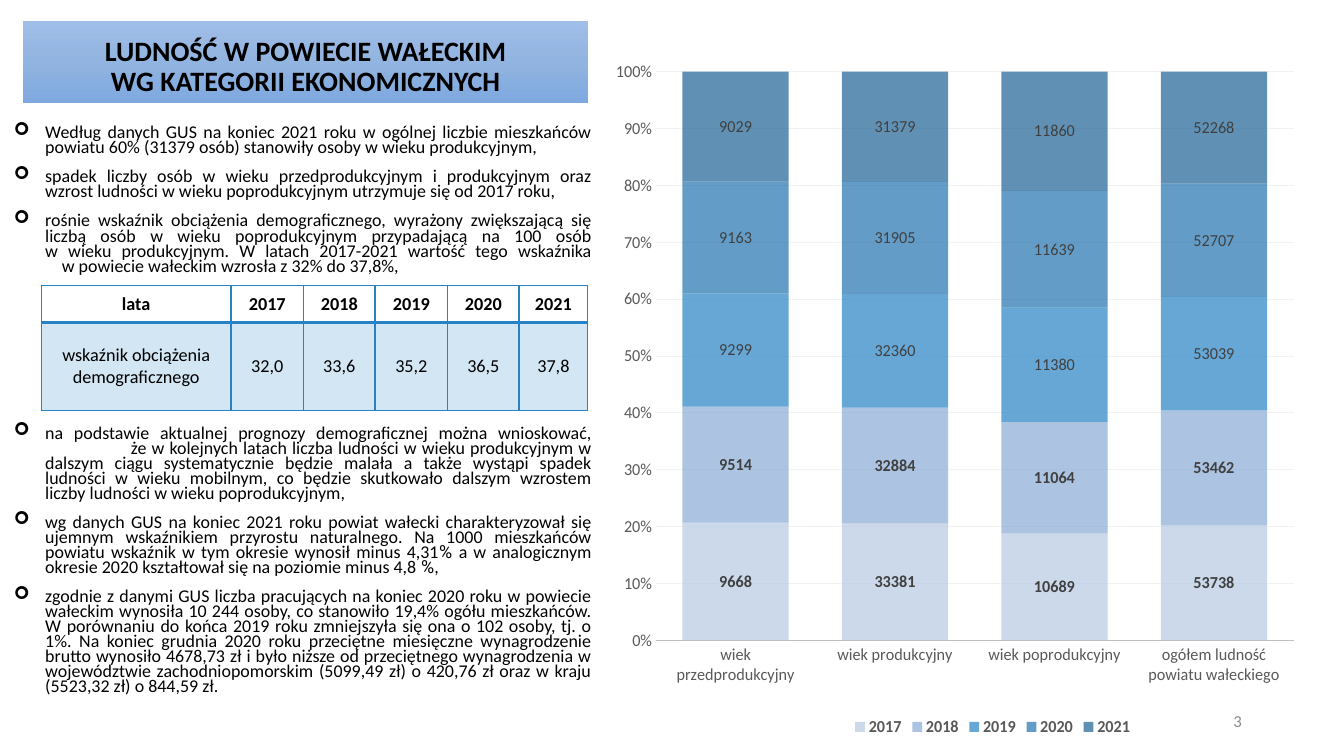
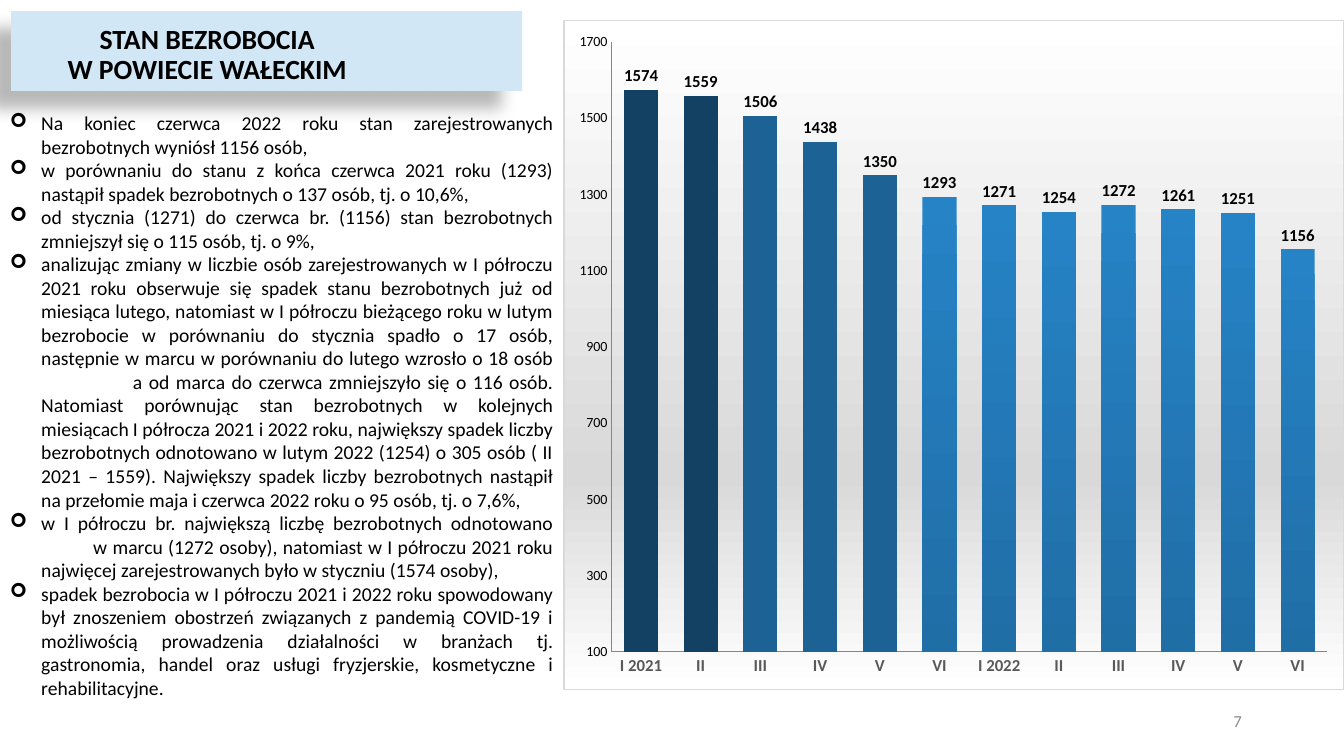
import copy

from pptx import Presentation
from pptx import util as u
from pptx.chart.data import CategoryChartData
from pptx.dml.color import RGBColor
from pptx.enum import chart as charts, text as texts
from pptx.oxml import parse_xml
from pptx.oxml.ns import nsdecls, qn

BLACK = RGBColor(0x00, 0x00, 0x00)
DARK = RGBColor(0x40, 0x40, 0x40)
GREY = RGBColor(0x59, 0x59, 0x59)
PAGE_GREY = RGBColor(0x8C, 0x8C, 0x8C)
AXIS = RGBColor(0xBF, 0xBF, 0xBF)
AXIS_DARK = RGBColor(0x86, 0x86, 0x86)
GRID = RGBColor(0xF2, 0xF2, 0xF2)
FRAME = RGBColor(0xD9, 0xD9, 0xD9)
WHITE = RGBColor(0xFF, 0xFF, 0xFF)
PALE = RGBColor(0xD1, 0xE7, 0xF6)
BLUE = RGBColor(0x26, 0x83, 0xC6)
BLUE_LOW = RGBColor(0x20, 0x6E, 0xA6)
NAVY = RGBColor(0x13, 0x41, 0x63)
DEEP = RGBColor(0x1D, 0x62, 0x94)
YEAR_COLORS = [RGBColor(0xB7, 0xC9, 0xE3), RGBColor(0x89, 0xAB, 0xD5), BLUE,
               RGBColor(0x22, 0x74, 0xB0), RGBColor(0x1D, 0x63, 0x96)]
TITLE_STOPS = [(0, RGBColor(0x9F, 0xBE, 0xE8)), (50, RGBColor(0x92, 0xB4, 0xE0)),
               (100, RGBColor(0x7E, 0xA9, 0xE0))]
INDENT = u.Cm(0.79)


def dress(font, size=12, color=BLACK, bold=False, name="Calibri"):
    font.size, font.bold, font.name = u.Pt(size), bold, name
    font.color.rgb = color


def write(para, text, **style):
    """Add text to a paragraph; a newline becomes a line break."""
    for number, line in enumerate(text.split("\n")):
        if number:
            para.add_line_break()
        span = para.add_run()
        span.text = line
        dress(span.font, **style)
        if number:
            span._r.getprevious().insert(0, copy.deepcopy(span._r.rPr))


def gradient(stops):
    marks = "".join(f'<a:gs pos="{place * 1000}"><a:srgbClr val="{color}"/></a:gs>'
                    for place, color in stops)
    return parse_xml(f'<a:gradFill {nsdecls("a")} rotWithShape="1"><a:gsLst>{marks}</a:gsLst>'
                     '<a:lin ang="5400000" scaled="0"/></a:gradFill>')


def solid(fill, color):
    fill.solid()
    fill.fore_color.rgb = color


def fade(element, percent):
    """Make the solid fill of an element partly transparent."""
    color = element.find(f'{qn("a:solidFill")}/{qn("a:srgbClr")}')
    color.append(parse_xml(f'<a:alpha {nsdecls("a")} val="{percent * 1000}"/>'))


class Report:
    def __init__(self):
        self.deck = Presentation()
        self.deck.slide_width, self.deck.slide_height = u.Cm(33.87), u.Cm(19.05)
        self.page = None

    def new_page(self, number):
        self.page = self.deck.slides.add_slide(self.deck.slide_layouts[5])
        frame = self.text_frame(23.93, 17.65, 7.62, 1.02)
        frame.vertical_anchor = texts.MSO_ANCHOR.MIDDLE
        para = frame.paragraphs[0]
        para.alignment = texts.PP_ALIGN.RIGHT
        write(para, str(number), color=PAGE_GREY)

    def text_frame(self, *place):
        box = self.page.shapes.add_textbox(*map(u.Cm, place))
        box.text_frame.word_wrap = True
        return box.text_frame

    def title(self, lines, place, size, first_shift=0):
        """Fill the title; first_shift is a right margin for its first line."""
        box = self.page.shapes.title
        box.left, box.top, box.width, box.height = map(u.Cm, place)
        frame = box.text_frame
        frame.word_wrap = True
        frame.auto_size = texts.MSO_AUTO_SIZE.NONE
        frame.vertical_anchor = texts.MSO_ANCHOR.BOTTOM
        for number, line in enumerate(lines):
            para = frame.add_paragraph() if number else frame.paragraphs[0]
            para.alignment, para.line_spacing = texts.PP_ALIGN.CENTER, 0.9
            write(para, line, size=size, bold=True)
        if first_shift:
            frame.paragraphs[0]._p.get_or_add_pPr().set("marR", str(u.Cm(first_shift)))
        return box

    def bullets(self, place, items, size, spacing=1.0, before=0):
        """Items are (text, tab stops); a tuple of texts alternates Calibri and Roboto."""
        frame = self.text_frame(*place)
        for number, (parts, tabs) in enumerate(items):
            para = frame.add_paragraph() if number else frame.paragraphs[0]
            para.alignment, para.line_spacing = texts.PP_ALIGN.JUSTIFY, spacing
            para.space_before = u.Pt(before)
            props = para._p.get_or_add_pPr()
            props.set("marL", str(INDENT))
            props.set("indent", str(-INDENT))
            props.append(parse_xml(f'<a:buFont {nsdecls("a")} typeface="Wingdings"/>'))
            props.append(parse_xml(f'<a:buChar {nsdecls("a")} char="➢"/>'))
            if tabs:
                stops = "".join(f'<a:tab pos="{u.Cm(tab)}" algn="l"/>' for tab in tabs)
                props.append(parse_xml(f'<a:tabLst {nsdecls("a")}>{stops}</a:tabLst>'))
            for index, part in enumerate([parts] if isinstance(parts, str) else parts):
                write(para, part, size=size, name=("Calibri", "Roboto")[index % 2])

    def table(self, place, widths, heights, rows):
        table = self.page.shapes.add_table(len(rows), len(widths), *map(u.Cm, place)).table
        table.first_row = table.horz_banding = False
        for column, width in zip(table.columns, widths):
            column.width = u.Cm(width)
        for r, (row, height) in enumerate(zip(rows, heights)):
            table.rows[r].height = u.Cm(height)
            for c, value in enumerate(row):
                cell = table.cell(r, c)
                cell.vertical_anchor = texts.MSO_ANCHOR.MIDDLE
                para = cell.text_frame.paragraphs[0]
                para.alignment = texts.PP_ALIGN.CENTER
                write(para, value, size=13, bold=r == 0)
                props = cell._tc.get_or_add_tcPr()
                if r:
                    solid(cell.fill, BLUE)
                    fade(props, 20)
                else:
                    cell.fill.background()
                # The rule under the header row is double width
                thick = "T" if r else "B"
                for index, side in enumerate("LRTB"):
                    props.insert(index, parse_xml(
                        f'<a:ln{side} {nsdecls("a")} w="{u.Pt(2 if side == thick else 1)}">'
                        f'<a:solidFill><a:srgbClr val="{BLUE}"/></a:solidFill></a:ln{side}>'))

    def chart(self, kind, place, categories, series, gap, bold_axis=False):
        data = CategoryChartData()
        data.categories = categories
        for name, values in series:
            data.add_series(name, values)
        chart = self.page.shapes.add_chart(kind, *map(u.Cm, place), data).chart
        dress(chart.font, size=10)
        chart.has_title = chart.has_legend = False
        plot = chart.plots[0]
        plot.gap_width, plot.vary_by_categories = gap, False
        for axis in (chart.category_axis, chart.value_axis):
            axis.major_tick_mark = axis.minor_tick_mark = charts.XL_TICK_MARK.NONE
            axis.has_major_gridlines = False
        dress(chart.category_axis.tick_labels.font, color=GREY, bold=bold_axis)
        return chart

    def labels(self, series, position, **style):
        labels = series.data_labels
        labels.show_value, labels.position = True, position
        dress(labels.font, **style)


def population(report):
    report.new_page(3)
    box = report.title(["LUDNOŚĆ W POWIECIE WAŁECKIM", "WG KATEGORII EKONOMICZNYCH"],
                       (0.58, 0.53, 14.25, 2.06), 20)
    box.element.spPr.append(gradient(TITLE_STOPS))

    # Chart of age groups
    years = [("2017", (9668, 33381, 10689, 53738)), ("2018", (9514, 32884, 11064, 53462)),
             ("2019", (9299, 32360, 11380, 53039)), ("2020", (9163, 31905, 11639, 52707)),
             ("2021", (9029, 31379, 11860, 52268))]
    chart = report.chart(charts.XL_CHART_TYPE.COLUMN_STACKED_100, (15.52, 0.2, 18.34, 18.47),
                         ["wiek przedprodukcyjny", "wiek produkcyjny", "wiek poprodukcyjny",
                          "ogółem ludność powiatu wałeckiego"], years, 50)
    chart.plots[0].overlap = 100
    for index, (series, color) in enumerate(zip(chart.plots[0].series, YEAR_COLORS)):
        solid(series.format.fill, color)
        fade(series._element.find(qn("c:spPr")), 70)
        report.labels(series, charts.XL_LABEL_POSITION.CENTER, color=DARK, bold=index < 2)
    chart.category_axis.format.line.color.rgb = AXIS
    values = chart.value_axis
    values.has_major_gridlines = True
    values.major_gridlines.format.line.color.rgb = GRID
    values.format.line.fill.background()
    values.tick_labels.number_format = "0%"
    values.tick_labels.number_format_is_linked = False
    dress(values.tick_labels.font, color=GREY)
    chart.has_legend = True
    chart.legend.position = charts.XL_LEGEND_POSITION.BOTTOM
    chart.legend.include_in_layout = False
    dress(chart.legend.font, color=GREY, bold=True)
    area = chart._chartSpace.find(f'{qn("c:chart")}/{qn("c:plotArea")}')
    for old in area.findall(qn("c:layout")):
        area.remove(old)
    frame = "".join(f'<c:{key} val="{value}"/>' for key, value in (
        ("layoutTarget", "inner"), ("xMode", "edge"), ("yMode", "edge"),
        ("x", 0.02), ("y", 0.087), ("w", 0.909), ("h", 0.776)))
    area.insert(0, parse_xml(f'<c:layout {nsdecls("c")}><c:manualLayout>{frame}'
                             '</c:manualLayout></c:layout>'))

    # Findings above and below the table
    style = dict(size=12.8, spacing=0.7, before=10)
    report.bullets((0.1, 3.07, 15.06, 4), [
        ("Według danych GUS na koniec 2021 roku w ogólnej liczbie mieszkańców powiatu 60% (31379 osób) stanowiły osoby w wieku produkcyjnym,", ()),
        ("spadek liczby osób w wieku przedprodukcyjnym i produkcyjnym oraz wzrost ludności w wieku poprodukcyjnym utrzymuje się od 2017 roku,", ()),
        ("rośnie wskaźnik obciążenia demograficznego, wyrażony zwiększającą się liczbą osób w wieku poprodukcyjnym przypadającą na 100 osób\nw wieku produkcyjnym. W latach 2017-2021 wartość tego wskaźnika\n\tw powiecie wałeckim wzrosła z 32% do 37,8%,", (1.21,)),
    ], **style)
    report.bullets((0.1, 10.64, 15.06, 7.5), [
        ("na podstawie aktualnej prognozy demograficznej można wnioskować,\n\tże w kolejnych latach liczba ludności w wieku produkcyjnym w dalszym ciągu systematycznie będzie malała a także wystąpi spadek ludności w wieku mobilnym, co będzie skutkowało dalszym wzrostem liczby ludności w wieku poprodukcyjnym,", (2.95,)),
        (("wg danych GUS na koniec 2021 roku powiat wałecki charakteryzował się ujemnym wskaźnikiem przyrostu naturalnego. Na 1000 mieszkańców powiatu wskaźnik w tym okresie wynosił minus 4,31", "% ", "a w analogicznym okresie 2020 kształtował się na poziomie minus 4,8", " %", ","), ()),
        ("zgodnie z danymi GUS liczba pracujących na koniec 2020 roku w powiecie wałeckim wynosiła 10 244 osoby, co stanowiło 19,4% ogółu mieszkańców. W porównaniu do końca 2019 roku zmniejszyła się ona o 102 osoby, tj. o 1%. Na koniec grudnia 2020 roku przeciętne miesięczne wynagrodzenie brutto wynosiło 4678,73 zł i było niższe od przeciętnego wynagrodzenia w województwie zachodniopomorskim (5099,49 zł) o 420,76 zł oraz w kraju (5523,32 zł) o 844,59 zł.", ()),
    ], **style)
    report.table((1.04, 7.19, 13.79, 3.15), [4.78, 1.83, 1.8, 1.83, 1.8, 1.73], [0.94, 2.21], [
        ["lata", "2017", "2018", "2019", "2020", "2021"],
        ["wskaźnik obciążenia demograficznego", "32,0", "33,6", "35,2", "36,5", "37,8"]])


def unemployment(report):
    report.new_page(7)
    box = report.title(["STAN BEZROBOCIA", "W POWIECIE WAŁECKIM"],
                       (0.28, 0.28, 12.88, 2.01), 19.8, first_shift=3)
    solid(box.fill, PALE)
    box.element.spPr.append(parse_xml(
        f'<a:effectLst {nsdecls("a")}><a:outerShdw blurRad="{u.Pt(11.8)}" dist="{u.Pt(19.7)}" '
        f'dir="8460000" algn="tr" rotWithShape="0"><a:srgbClr val="{BLACK}">'
        '<a:alpha val="28000"/></a:srgbClr></a:outerShdw></a:effectLst>'))

    # Chart of registered unemployed by month
    months = ["I 2021", "II", "III", "IV", "V", "VI", "I 2022", "II", "III", "IV", "V", "VI"]
    counts = (1574, 1559, 1506, 1438, 1350, 1293, 1271, 1254, 1272, 1261, 1251, 1156)
    chart = report.chart(charts.XL_CHART_TYPE.COLUMN_CLUSTERED, (14.2, 0.51, 19.66, 16.87),
                         months, [("Bezrobotni", counts)], 75, bold_axis=True)
    values = chart.value_axis
    values.minimum_scale, values.maximum_scale, values.major_unit = 100, 1700, 200
    for axis in (values, chart.category_axis):
        axis.format.line.color.rgb = AXIS_DARK
    series = chart.plots[0].series[0]
    series.invert_if_negative = False
    series.format.fill.background()
    props = series._element.find(qn("c:spPr"))
    props.replace(props.find(qn("a:noFill")), gradient([(0, BLUE), (100, BLUE_LOW)]))
    for index, color in enumerate([NAVY] * 2 + [DEEP] * 3):
        solid(series.points[index].format.fill, color)
    report.labels(series, charts.XL_LABEL_POSITION.OUTSIDE_END, bold=True)
    backdrop = parse_xml(
        f'<c:spPr {nsdecls("c", "a")}><a:ln w="{u.Pt(0.75)}"><a:solidFill>'
        f'<a:srgbClr val="{FRAME}"/></a:solidFill></a:ln></c:spPr>')
    backdrop.insert(0, gradient([(0, WHITE), (68, FRAME), (100, WHITE)]))
    chart._chartSpace.find(qn("c:chart")).addnext(backdrop)

    # Findings
    report.bullets((0, 2.67, 14.2, 15.7), [
        ("Na koniec czerwca 2022 roku stan zarejestrowanych bezrobotnych wyniósł 1156 osób,", ()),
        ("w porównaniu do stanu z końca czerwca 2021 roku (1293) nastąpił spadek bezrobotnych o 137 osób, tj. o 10,6%,", ()),
        ("od stycznia (1271) do czerwca br. (1156) stan bezrobotnych zmniejszył się o 115 osób, tj. o 9%,", ()),
        ("analizując zmiany w liczbie osób zarejestrowanych w I półroczu 2021 roku obserwuje się spadek stanu bezrobotnych już od miesiąca lutego, natomiast w I półroczu bieżącego roku w lutym bezrobocie w porównaniu do stycznia spadło o 17 osób, następnie w marcu w porównaniu do lutego wzrosło o 18 osób\n\ta od marca do czerwca zmniejszyło się o 116 osób. Natomiast porównując stan bezrobotnych w kolejnych miesiącach\tI półrocza 2021 i 2022 roku, największy spadek liczby bezrobotnych odnotowano w lutym 2022 (1254) o 305 osób ( II 2021 – 1559). Największy spadek liczby bezrobotnych nastąpił na przełomie maja i czerwca 2022 roku o 95 osób, tj. o 7,6%,", (3.1, 7.1)),
        ("w I półroczu br. największą liczbę bezrobotnych odnotowano\n\tw marcu (1272 osoby), natomiast w I półroczu 2021 roku najwięcej zarejestrowanych było w styczniu (1574 osoby),", (2.1,)),
        ("spadek bezrobocia w I półroczu 2021 i 2022 roku spowodowany był znoszeniem obostrzeń związanych z pandemią COVID-19 i możliwością prowadzenia działalności w branżach tj. gastronomia, handel oraz usługi fryzjerskie, kosmetyczne i rehabilitacyjne.", ()),
    ], size=14)


def main():
    report = Report()
    population(report)
    unemployment(report)
    report.deck.save("out.pptx")


if __name__ == "__main__":
    main()
